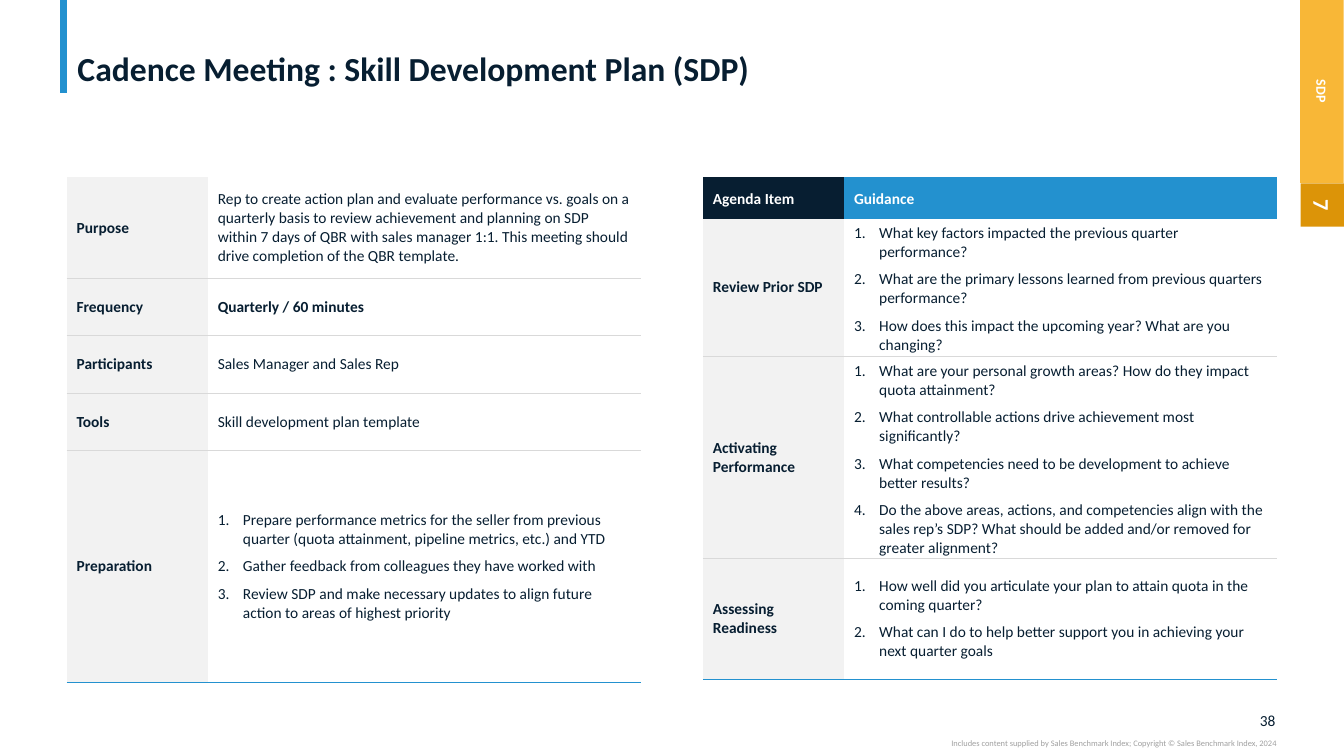
from dataclasses import dataclass

from lxml.etree import SubElement
from pptx import Presentation
from pptx.dml.color import RGBColor
from pptx.enum.shapes import MSO_CONNECTOR, MSO_SHAPE
from pptx.enum.text import MSO_ANCHOR, PP_ALIGN
from pptx.oxml import parse_xml
from pptx.oxml.ns import nsdecls, qn
from pptx.util import Pt

SCALE = 9144


@dataclass(frozen=True)
class Theme:
    """Colours, typeface and type sizes of the slide."""
    font: str = "Calibri"
    navy: str = "071E31"
    blue: str = "2391CF"
    white: str = "FFFFFF"
    label_fill: str = "F2F2F2"
    rule: str = "D9D9D9"
    credit: str = "A0A0A0"
    amber: str = "F8B737"
    dark_amber: str = "DC9408"
    title_size: int = 24
    section_size: int = 16
    body_size: int = 11
    tab_size: int = 10
    credit_size: int = 6


THEME = Theme()

PLAN_ROWS = [
    ("Purpose", "Rep to create action plan and evaluate performance vs. goals on a quarterly basis to review "
     "achievement and planning on SDP within 7 days of QBR with sales manager 1:1. This meeting should drive "
     "completion of the QBR template."),
    ("Frequency", "Quarterly / 60 minutes"),
    ("Participants", "Sales Manager and Sales Rep"),
    ("Tools", "Skill development plan template"),
    ("Preparation", [
        "Prepare performance metrics for the seller from previous quarter (quota attainment, pipeline metrics, "
        "etc.) and YTD",
        "Gather feedback from colleagues they have worked with",
        "Review SDP and make necessary updates to align future action to areas of highest priority"]),
]
AGENDA_ROWS = [
    ("Agenda Item", "Guidance"),
    ("Review Prior SDP", [
        "What key factors impacted the previous quarter performance?",
        "What are the primary lessons learned from previous quarters performance?",
        "How does this impact the upcoming year? What are you changing?"]),
    ("Activating Performance", [
        "What are your personal growth areas? How do they impact quota attainment?",
        "What controllable actions drive achievement most significantly?",
        "What competencies need to be development to achieve better results?",
        "Do the above areas, actions, and competencies align with the sales rep’s SDP? What should be added "
        "and/or removed for greater alignment?"]),
    ("Assessing Readiness", [
        "How well did you articulate your plan to attain quota in the coming quarter?",
        "What can I do to help better support you in achieving your next quarter goals"]),
]


def px(*lengths):
    """Turn whole px lengths into EMU."""
    return [length * SCALE for length in lengths]


def apply(target, values):
    """Set attributes of an object from a dict."""
    for name, value in values.items():
        setattr(target, name, value)


def write(para, text, size, color, bold=False):
    """Fill a paragraph with one styled span."""
    span = para.add_run()
    span.text = text
    apply(span.font, {"name": THEME.font, "size": Pt(size), "bold": bold})
    span.font.color.rgb = RGBColor.from_string(color)


def set_frame(frame, anchor, side=0, end=0):
    """Set wrapping, anchor and insets of a text frame."""
    left, top = px(side, end)
    apply(frame, {"word_wrap": True, "vertical_anchor": anchor, "margin_left": left,
                  "margin_right": left, "margin_top": top, "margin_bottom": top})


def add_label(page, box, text, size, color, anchor, paragraph, side=0, bold=False):
    """Place a one-paragraph text box."""
    frame = page.shapes.add_textbox(*px(*box)).text_frame
    set_frame(frame, anchor, side)
    apply(frame.paragraphs[0], paragraph)
    write(frame.paragraphs[0], text, size, color, bold)


def add_header(page, box):
    """Place the title and the accent bar to its left."""
    left, top, width, height = box
    bar = page.shapes.add_connector(MSO_CONNECTOR.STRAIGHT, *px(left - 4, 0, left - 4, top + height + 4))
    bar.line.color.rgb = RGBColor.from_string(THEME.blue)
    bar.line.width = Pt(5)
    SubElement(bar._element.spPr, qn("a:effectLst"))
    add_label(page, box, "Cadence Meeting : Skill Development Plan (SDP)", THEME.title_size, THEME.navy,
              MSO_ANCHOR.BOTTOM, {"line_spacing": 0.9}, side=10, bold=True)


def add_footer(page, box):
    """Place the page number above the copyright line, both flush right."""
    left, top, width, height = box
    right = {"alignment": PP_ALIGN.RIGHT}
    add_label(page, (left + width - 34, top, 33, 19), "38", THEME.body_size, THEME.navy,
              MSO_ANCHOR.MIDDLE, right)
    add_label(page, (left, top + height - 10, width, 10),
              "Includes content supplied by Sales Benchmark Index; Copyright © Sales Benchmark Index, 2024",
              THEME.credit_size, THEME.credit, MSO_ANCHOR.TOP, right)


def add_side_tab(page, box):
    """Stack the turned section name and number in a strip."""
    left, top, width, height = box
    split = height - width
    parts = [("SDP", top, split, THEME.amber, THEME.tab_size),
             ("7", top + split, width, THEME.dark_amber, THEME.section_size)]
    for text, start, length, fill, size in parts:
        turned = (left + (width - length) // 2, start + (length - width) // 2, length, width)
        tab = page.shapes.add_shape(MSO_SHAPE.RECTANGLE, *px(*turned))
        apply(tab, {"rotation": 90})
        tab.shadow.inherit = False
        tab.fill.solid()
        tab.fill.fore_color.rgb = RGBColor.from_string(fill)
        tab.line.fill.background()
        set_frame(tab.text_frame, MSO_ANCHOR.MIDDLE, 10, 5)
        tab.text_frame.paragraphs[0].alignment = PP_ALIGN.CENTER
        write(tab.text_frame.paragraphs[0], text, size, THEME.white, True)


def set_borders(cell, top, bottom):
    """Give a cell its top and bottom rules and no side rules."""
    properties = cell._tc.get_or_add_tcPr()
    sides = [("lnL", None), ("lnR", None), ("lnT", top), ("lnB", bottom)]
    for index, (side, rule) in enumerate(sides):
        if rule:
            color, points = rule
            paint = f'<a:solidFill><a:srgbClr val="{color}"/></a:solidFill>'
            width = Pt(points)
        else:
            paint, width = "<a:noFill/>", 0
        properties.insert(index, parse_xml(f'<a:{side} {nsdecls("a")} w="{width}">{paint}</a:{side}>'))


def number_item(para):
    """Give a paragraph an automatic number and a hanging indent."""
    properties = para._p.get_or_add_pPr()
    indent = 25 * SCALE
    properties.set("marL", str(indent))
    properties.set("indent", str(-indent))
    SubElement(properties, qn("a:buFont"), typeface="+mj-lt")
    SubElement(properties, qn("a:buAutoNum"), type="arabicPeriod")
    para.space_after = Pt(6)


def fill_cell(cell, content, fill, color, bold):
    """Fill a cell with plain text or a numbered list."""
    cell.vertical_anchor = MSO_ANCHOR.MIDDLE
    if fill:
        cell.fill.solid()
        cell.fill.fore_color.rgb = RGBColor.from_string(fill)
    else:
        cell.fill.background()
    items = content if isinstance(content, list) else [content]
    for index, text in enumerate(items):
        para = cell.text_frame.paragraphs[0] if index == 0 else cell.text_frame.add_paragraph()
        if isinstance(content, list):
            number_item(para)
        write(para, text, THEME.body_size, color, bold)


def add_plan_table(page, box, rows, heights, has_header=False, bold_rows=()):
    """Place a two-column table of labels and details."""
    left, top, width = box
    table = page.shapes.add_table(len(rows), 2, *px(left, top, width, sum(heights))).table
    apply(table, {"first_row": has_header, "horz_banding": False})
    for column, length in zip(table.columns, px(140, width - 140)):
        column.width = length
    thin, closing = (THEME.rule, 0.25), (THEME.blue, 1)
    above = None
    for index, (row, height) in enumerate(zip(rows, px(*heights))):
        table.rows[index].height = height
        header = has_header and index == 0
        below = None if header else closing if index == len(rows) - 1 else thin
        fills = (THEME.navy, THEME.blue) if header else (THEME.label_fill, None)
        for place, content in enumerate(row):
            cell = table.cell(index, place)
            bold = header or place == 0 or index in bold_rows
            fill_cell(cell, content, fills[place], THEME.white if header else THEME.navy, bold)
            if header:
                cell.text_frame.paragraphs[0].line_spacing = 1.1
            set_borders(cell, above, below)
        above = below


def main():
    """Build the slide and save it."""
    deck = Presentation()
    width, height = px(1333, 750)
    apply(deck, {"slide_width": width, "slide_height": height})
    page = deck.slides.add_slide(deck.slide_layouts[6])
    add_header(page, (67, 4, 1199, 84))
    add_footer(page, (750, 705, 516, 37))
    add_plan_table(page, (66, 176, 570), PLAN_ROWS, (100, 57, 57, 57, 230), bold_rows=(1,))
    add_plan_table(page, (697, 176, 570), AGENDA_ROWS, (41, 135, 190, 120), has_header=True)
    add_side_tab(page, (1290, 0, 43, 225))
    deck.save("out.pptx")


if __name__ == "__main__":
    main()
